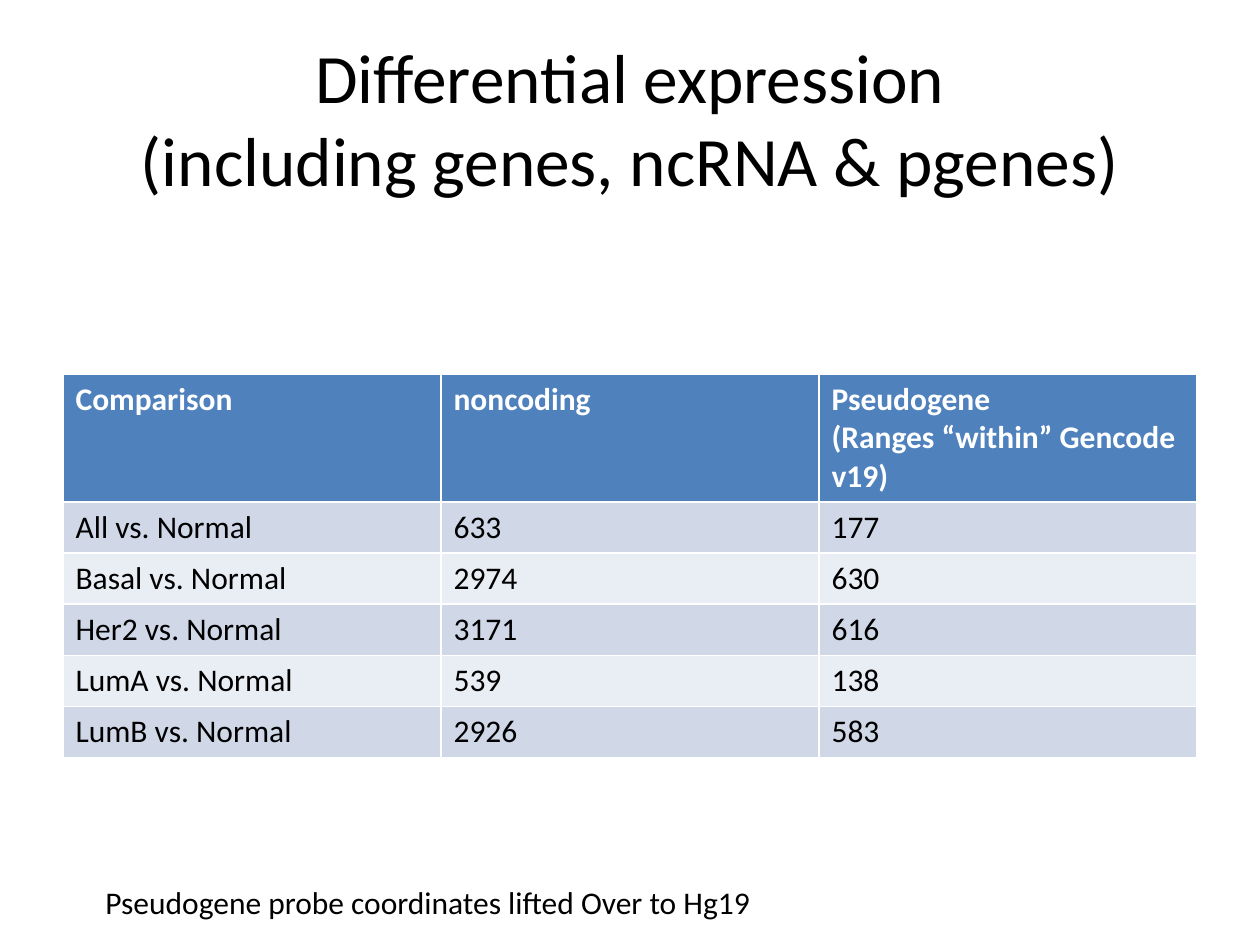
from pptx import Presentation
from pptx.dml.color import RGBColor
from pptx.enum.text import MSO_ANCHOR, MSO_AUTO_SIZE, PP_ALIGN
from pptx.util import Emu, Pt

TITLE = ["Differential expression", "(including genes, ncRNA & pgenes)"]
HEADER = ["Comparison", "noncoding", "Pseudogene\n(Ranges “within” Gencode v19)"]
RESULTS = [
    ("All vs. Normal", 633, 177),
    ("Basal vs. Normal", 2974, 630),
    ("Her2 vs. Normal", 3171, 616),
    ("LumA vs. Normal", 539, 138),
    ("LumB vs. Normal", 2926, 583),
]
FOOTNOTE = "Pseudogene probe coordinates lifted Over to Hg19"

COLORS = {
    "text": "000000",
    "header_text": "FFFFFF",
    "header": "4F81BD",
    "odd_band": "D0D8E8",
    "even_band": "E9EDF4",
}
FONT = "Calibri"
PX_PER_INCH = 126
LEFT, WIDTH = 63, 1134
TABLE_TOP, HEADER_HEIGHT, ROW_HEIGHT = 374, 127, 51


def px(length):
    return Emu(round(length * 914400 / PX_PER_INCH))


def place(shape, left, top, width, height):
    shape.left, shape.top = px(left), px(top)
    shape.width, shape.height = px(width), px(height)


def add_run(paragraph, text, size, color="text", bold=False):
    run = paragraph.add_run()
    run.text = text
    run.font.name = FONT
    run.font.size = Pt(size)
    run.font.bold = bold
    run.font.color.rgb = RGBColor.from_string(COLORS[color])


def add_title(slide):
    title = slide.shapes.title
    place(title, LEFT, 38, WIDTH, 158)
    frame = title.text_frame
    frame.auto_size = MSO_AUTO_SIZE.NONE
    frame.vertical_anchor = MSO_ANCHOR.MIDDLE
    paragraph = frame.paragraphs[0]
    paragraph.alignment = PP_ALIGN.CENTER
    for index, line in enumerate(TITLE):
        if index:
            paragraph.add_line_break()
        add_run(paragraph, line, 39.6)


def fill_cell(cell, text, fill, color, bold):
    cell.fill.solid()
    cell.fill.fore_color.rgb = RGBColor.from_string(COLORS[fill])
    frame = cell.text_frame
    for index, line in enumerate(text.split("\n")):
        paragraph = frame.add_paragraph() if index else frame.paragraphs[0]
        add_run(paragraph, line, 18, color, bold)


def add_results(slide):
    rows = [HEADER, *RESULTS]
    height = HEADER_HEIGHT + ROW_HEIGHT * len(RESULTS)
    table = slide.shapes.add_table(
        len(rows), len(HEADER), px(LEFT), px(TABLE_TOP), px(WIDTH), px(height)
    ).table
    for column in table.columns:
        column.width = px(WIDTH / len(HEADER))
    for row_index, values in enumerate(rows):
        is_header = row_index == 0
        table.rows[row_index].height = px(HEADER_HEIGHT if is_header else ROW_HEIGHT)
        band = "odd_band" if row_index % 2 else "even_band"
        fill = "header" if is_header else band
        color = "header_text" if is_header else "text"
        for column_index, value in enumerate(values):
            cell = table.cell(row_index, column_index)
            fill_cell(cell, str(value), fill, color, is_header)


def add_footnote(slide):
    box = slide.shapes.add_textbox(px(93), px(877), px(680), px(51))
    box.text_frame.word_wrap = False
    box.text_frame.auto_size = MSO_AUTO_SIZE.SHAPE_TO_FIT_TEXT
    add_run(box.text_frame.paragraphs[0], FOOTNOTE, 18)


def main():
    presentation = Presentation()
    presentation.slide_width = px(1260)
    presentation.slide_height = px(945)
    slide = presentation.slides.add_slide(presentation.slide_layouts[5])
    add_title(slide)
    add_results(slide)
    add_footnote(slide)
    presentation.save("out.pptx")


if __name__ == "__main__":
    main()
